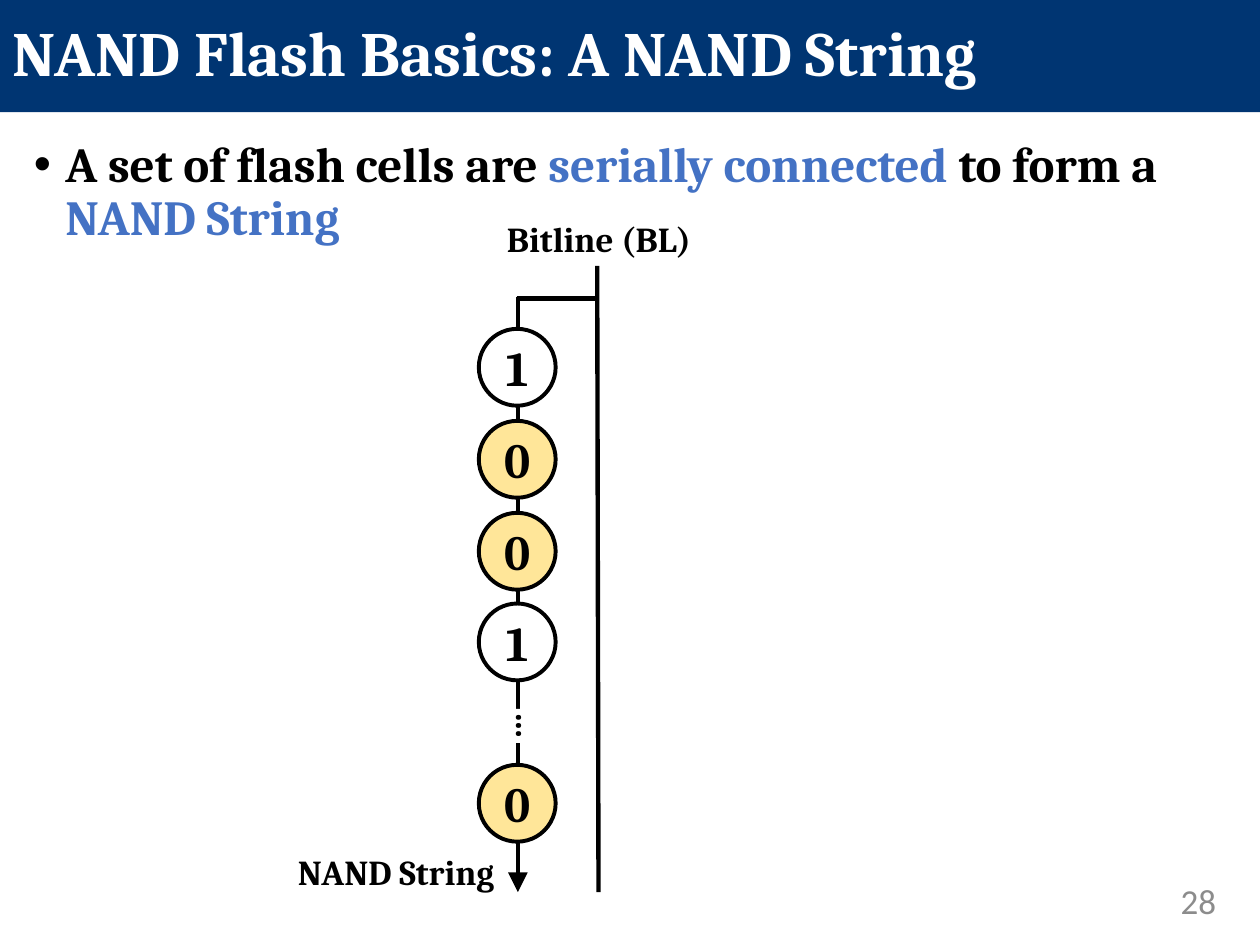
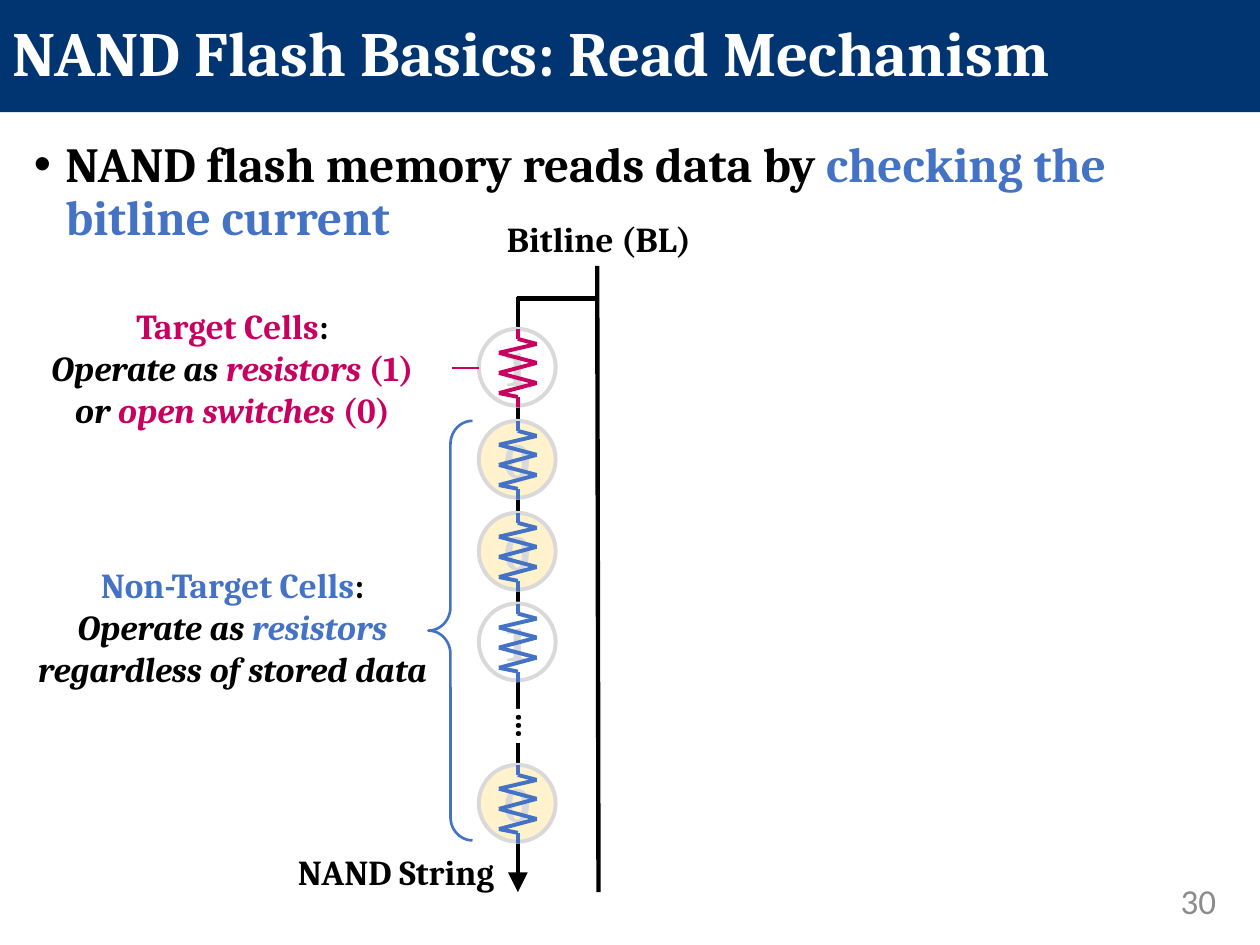
from itertools import pairwise

from lxml import etree
from pptx import Presentation
from pptx.dml.color import RGBColor
from pptx.enum.shapes import MSO_CONNECTOR, MSO_SHAPE
from pptx.enum.text import MSO_ANCHOR, MSO_AUTO_SIZE, PP_ALIGN
from pptx.oxml.ns import qn
from pptx.util import Inches, Pt

STRAIGHT = MSO_CONNECTOR.STRAIGHT
OVAL, LEFT_BRACE = MSO_SHAPE.OVAL, MSO_SHAPE.LEFT_BRACE
TOP, MIDDLE = MSO_ANCHOR.TOP, MSO_ANCHOR.MIDDLE
LEFT, CENTER, RIGHT = PP_ALIGN.LEFT, PP_ALIGN.CENTER, PP_ALIGN.RIGHT
NO_AUTOFIT = MSO_AUTO_SIZE.NONE

COLORS = {
    "navy": "003572", "white": "FFFFFF", "black": "000000", "blue": "4472C4",
    "pink": "C80060", "number": "8C8C8C", "faded": "D9D9D9",
    "yellow": "FFE699", "pale yellow": "FFF2CC",
}
RGB = {name: RGBColor.from_string(value) for name, value in COLORS.items()}

STRING_X = 4.11
CELL_LEFT, CELL_SIZE = 3.8, 0.61
CELLS = [(2.61, "1"), (3.34, "0"), (4.07, "0"), (4.79, "1"), (6.07, "0")]
# Offsets from the top centre of a cell
RESISTOR = [(0, 0), (0, 0.08), (0.15, 0.12), (-0.15, 0.19), (0.15, 0.27),
            (-0.15, 0.35), (0.15, 0.43), (-0.15, 0.51), (0, 0.54), (0, 0.62)]

SLIDES = [
    {
        "title": "NAND Flash Basics: A NAND String",
        "number": "28",
        "message": [("A set of flash cells are ", "black"), ("serially connected", "blue"),
                    (" to form a ", "black"), ("NAND String", "blue")],
        "cell line": "black",
        "zero fill": "yellow",
        "reading": False,
    },
    {
        "title": "NAND Flash Basics: Read Mechanism",
        "number": "30",
        "message": [("NAND flash memory reads data by ", "black"),
                    ("checking the bitline current", "blue")],
        "cell line": "faded",
        "zero fill": "pale yellow",
        "reading": True,
    },
]
STRING_LABELS = [((3.12, 1.72, 3.27, 0.34), "Bitline (BL)"),
                 ((1.51, 6.75, 3.27, 0.34), "NAND String")]
CELL_NOTES = [
    ((0.05, 4.47, 3.59, 1.01), [
        [("Non-Target Cells", "blue"), (":", "black")],
        [("Operate as ", "black", True), ("resistors", "blue", True), ("\n",),
         ("regardless of stored data", "black", True)],
    ]),
    ((0.1, 2.41, 3.49, 1.01), [
        [("Target Cells", "pink"), (":", "black")],
        [("Operate as ", "black", True), ("resistors ", "pink", True), ("(1)", "pink"), ("\n",),
         ("or ", "black", True), ("open switches ", "pink", True), ("(0)", "pink")],
    ]),
]


def write_text(shape, paragraphs, size, alignment=CENTER, anchor=MIDDLE, inset=(0, 0),
               font="Cambria", bold=True, spacing=None, bullet=False):
    """Fill a shape with paragraphs, each a list of (text, colour, italic) runs."""
    frame = shape.text_frame
    frame.auto_size = NO_AUTOFIT
    frame.word_wrap = True
    frame.vertical_anchor = anchor
    frame.margin_left = frame.margin_right = Inches(inset[0])
    frame.margin_top = frame.margin_bottom = Inches(inset[1])
    for index, runs in enumerate(paragraphs):
        paragraph = frame.add_paragraph() if index else frame.paragraphs[0]
        paragraph.alignment = alignment
        if spacing:
            paragraph.line_spacing = spacing
        if bullet:
            properties = paragraph._p.get_or_add_pPr()
            properties.set("marL", str(Inches(0.25)))
            properties.set("indent", str(-Inches(0.25)))
            etree.SubElement(properties, qn("a:buFont"), typeface="Arial")
            etree.SubElement(properties, qn("a:buChar"), char="•")
        paragraph.font.name = font
        paragraph.font.size = Pt(size)
        paragraph.font.bold = bold
        for text, *style in runs:
            if text == "\n":
                paragraph.add_line_break()
                continue
            run = paragraph.add_run()
            run.text = text
            run.font.color.rgb = RGB[style[0]]
            if len(style) > 1:
                run.font.italic = style[1]


def add_line(slide, start, end, color, width, arrow=False):
    line = slide.shapes.add_connector(STRAIGHT, *map(Inches, start + end))
    line.line.color.rgb = RGB[color]
    line.line.width = Pt(width)
    if arrow:
        etree.SubElement(line.line._get_or_add_ln(), qn("a:tailEnd"),
                         type="triangle", w="lg", len="lg")
    etree.SubElement(line._element.spPr, qn("a:effectLst"))


presentation = Presentation()
presentation.slide_width, presentation.slide_height = Inches(10), Inches(7.5)
title_only = presentation.slide_layouts[5]

for content in SLIDES:
    slide = presentation.slides.add_slide(title_only)
    shapes = slide.shapes

    # Title band, slide number and message
    title = shapes.title
    title.left, title.top, title.width, title.height = map(Inches, (0, 0, 10, 0.89))
    title.fill.solid()
    title.fill.fore_color.rgb = RGB["navy"]
    write_text(title, [[(content["title"], "white")]], 36, LEFT, inset=(0.1, 0.05), spacing=0.9)
    number = shapes.add_textbox(*map(Inches, (8.67, 6.95, 1.08, 0.4)))
    write_text(number, [[(content["number"], "number")]], 20, RIGHT, inset=(0.1, 0.05),
               font="Calibri", bold=False)
    message = shapes.add_textbox(*map(Inches, (0.17, 1.06, 9.67, 5.89)))
    write_text(message, [content["message"]], 28, LEFT, TOP, (0.1, 0.05), spacing=0.9, bullet=True)

    # NAND string hanging from the bitline
    add_line(slide, (STRING_X, 2.36), (STRING_X, 7.08), "black", 2.25, arrow=True)
    for top, bit in CELLS:
        cell = shapes.add_shape(OVAL, *map(Inches, (CELL_LEFT, top, CELL_SIZE, CELL_SIZE)))
        cell.shadow.inherit = False
        cell.fill.solid()
        cell.fill.fore_color.rgb = RGB[content["zero fill"] if bit == "0" else "white"]
        cell.line.color.rgb = RGB[content["cell line"]]
        cell.line.width = Pt(2.25)
        write_text(cell, [[(bit, content["cell line"])]], 28)
    add_line(slide, (4.1, 2.37), (4.75, 2.37), "black", 2.5)
    add_line(slide, (4.75, 7.08), (4.74, 2.11), "black", 2.5)
    dots = shapes.add_textbox(*map(Inches, (3.89, 5.59, 0.27, 0.34)))
    dots.rotation = 270
    dots.fill.solid()
    dots.fill.fore_color.rgb = RGB["white"]
    write_text(dots, [[("…", "black")]], 20)
    for box, label in STRING_LABELS:
        write_text(shapes.add_textbox(*map(Inches, box)), [[(label, "black")]], 20)

    if not content["reading"]:
        continue

    # Resistors, with the first cell as the read target
    for index, (top, bit) in enumerate(CELLS):
        points = [(STRING_X + x, top + y) for x, y in RESISTOR]
        for start, end in pairwise(points):
            add_line(slide, start, end, "blue" if index else "pink", 2.25)
    for box, note in CELL_NOTES:
        write_text(shapes.add_textbox(*map(Inches, box)), note, 20)
    brace = shapes.add_shape(LEFT_BRACE, *map(Inches, (3.4, 3.34, 0.35, 3.33)))
    brace.adjustments[0] = 0.53
    brace.shadow.inherit = False
    brace.fill.background()
    brace.line.color.rgb = RGB["blue"]
    brace.line.width = Pt(1.5)
    add_line(slide, (3.59, 2.92), (CELL_LEFT, 2.92), "pink", 1.5)

presentation.save("out.pptx")
